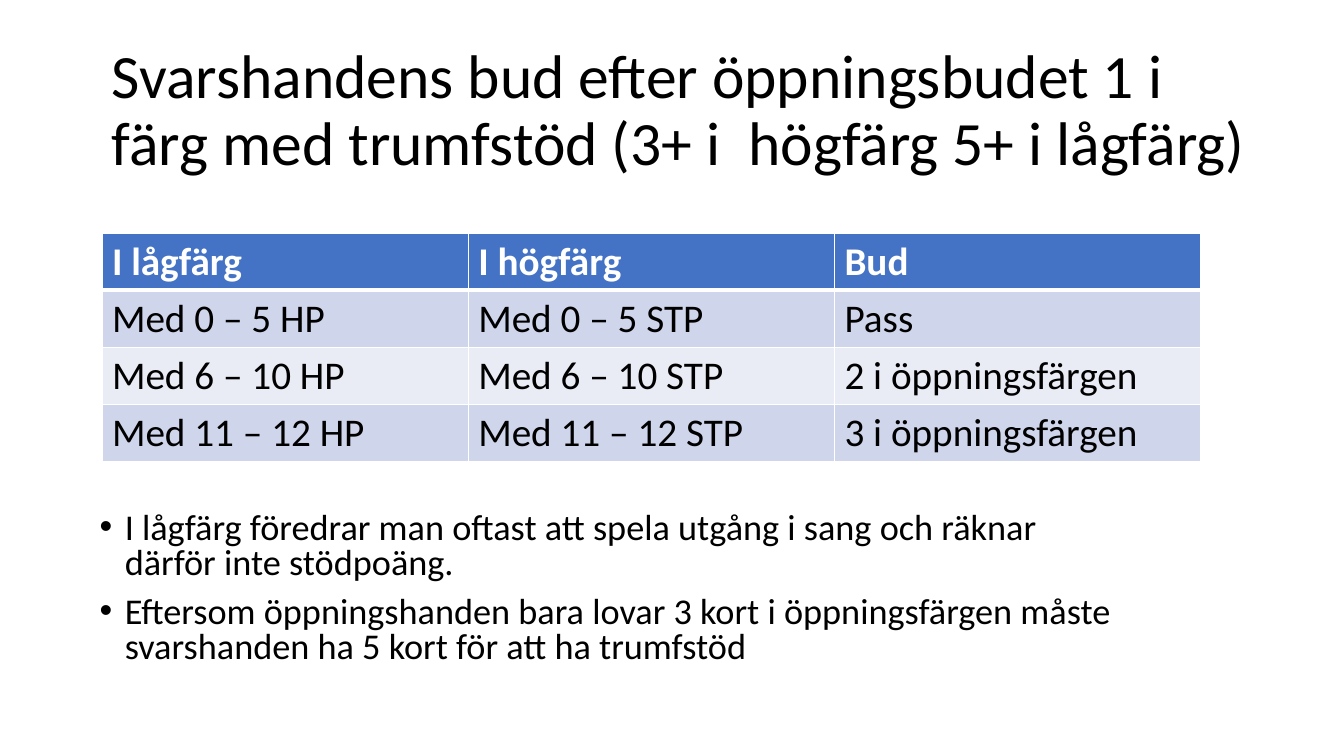
from dataclasses import dataclass

from lxml.etree import SubElement
from pptx import Presentation
from pptx.dml.color import RGBColor
from pptx.enum.text import MSO_ANCHOR as Anchor
from pptx.oxml.ns import qn
from pptx.util import Cm, Pt

FONT = "Calibri"
BLACK = RGBColor(0x00, 0x00, 0x00)
WHITE = RGBColor(0xFF, 0xFF, 0xFF)
BLUE = RGBColor(0x44, 0x72, 0xC4)
BAND_DARK = RGBColor(0xCF, 0xD5, 0xEA)
BAND_LIGHT = RGBColor(0xE9, 0xEB, 0xF5)
COL_WIDTH = Cm(9.23)
ROW_HEIGHT = Cm(1.44)


@dataclass
class TextBlock:
    paragraphs: list[str]
    left: float
    top: float
    width: float
    height: float
    size: float
    spacing: float
    anchor: Anchor = Anchor.TOP
    bullets: bool = False


BLOCKS = [
    TextBlock(
        ["Svarshandens bud efter öppningsbudet 1 i färg med trumfstöd "
         "(3+ i  högfärg 5+ i lågfärg)"],
        2.57, 0.99, 29.21, 3.68, size=44, spacing=0.9, anchor=Anchor.MIDDLE),
    TextBlock(
        ["I lågfärg föredrar man oftast att spela utgång i sang och räknar "
         "därför inte stödpoäng.",
         "Eftersom öppningshanden bara lovar 3 kort i öppningsfärgen måste "
         "svarshanden ha 5 kort för att ha trumfstöd"],
        2.26, 12.8, 26.44, 4.34, size=25.9, spacing=0.8, bullets=True),
]

BIDS = [
    ["I lågfärg", "I högfärg", "Bud"],
    ["Med 0 – 5 HP", "Med 0 – 5 STP", "Pass"],
    ["Med 6 – 10 HP", "Med 6 – 10 STP", "2 i öppningsfärgen"],
    ["Med 11 – 12 HP", "Med 11 – 12 STP", "3 i öppningsfärgen"],
]


def add_run(p, text: str, *, size: float, color: RGBColor = BLACK,
            bold: bool = False) -> None:
    r = p.add_run()
    r.text = text
    r.font.name = FONT
    r.font.size = Pt(size)
    r.font.bold = bold
    r.font.color.rgb = color


def add_bullet(p) -> None:
    pPr = p._p.get_or_add_pPr()
    pPr.set("marL", str(Cm(0.635)))
    pPr.set("indent", str(-Cm(0.635)))
    SubElement(pPr, qn("a:buFont"), typeface="Arial")
    SubElement(pPr, qn("a:buChar"), char="•")


def add_block(s, block: TextBlock) -> None:
    sp = s.shapes.add_textbox(Cm(block.left), Cm(block.top),
                              Cm(block.width), Cm(block.height))
    tf = sp.text_frame
    tf.word_wrap = True
    tf.vertical_anchor = block.anchor
    for i, text in enumerate(block.paragraphs):
        p = tf.add_paragraph() if i else tf.paragraphs[0]
        p.line_spacing = block.spacing
        if block.bullets:
            p.space_before = Pt(10)
            add_bullet(p)
        add_run(p, text, size=block.size)


def add_borders(cell, bottom: float) -> None:
    tcPr = cell._tc.get_or_add_tcPr()
    for side, width in zip("LRTB", (1, 1, 1, bottom)):
        ln = SubElement(tcPr, qn(f"a:ln{side}"), w=str(Pt(width)))
        fill = SubElement(ln, qn("a:solidFill"))
        SubElement(fill, qn("a:srgbClr"), val=str(WHITE))


def add_bid_table(s) -> None:
    rows, cols = len(BIDS), len(BIDS[0])
    table = s.shapes.add_table(rows, cols, Cm(2.57), Cm(5.87),
                               COL_WIDTH * cols, ROW_HEIGHT * rows).table
    for i, row in enumerate(BIDS):
        header = i == 0
        band = BAND_DARK if i % 2 else BAND_LIGHT
        for j, text in enumerate(row):
            cell = table.cell(i, j)
            add_borders(cell, bottom=3 if header else 1)
            cell.fill.solid()
            cell.fill.fore_color.rgb = BLUE if header else band
            add_run(cell.text_frame.paragraphs[0], text, size=28, bold=header,
                    color=WHITE if header else BLACK)


def main() -> None:
    prs = Presentation()
    prs.slide_width, prs.slide_height = Cm(33.87), Cm(19.05)
    s = prs.slides.add_slide(prs.slide_layouts[6])
    for block in BLOCKS:
        add_block(s, block)
    add_bid_table(s)
    prs.save("out.pptx")


if __name__ == "__main__":
    main()
